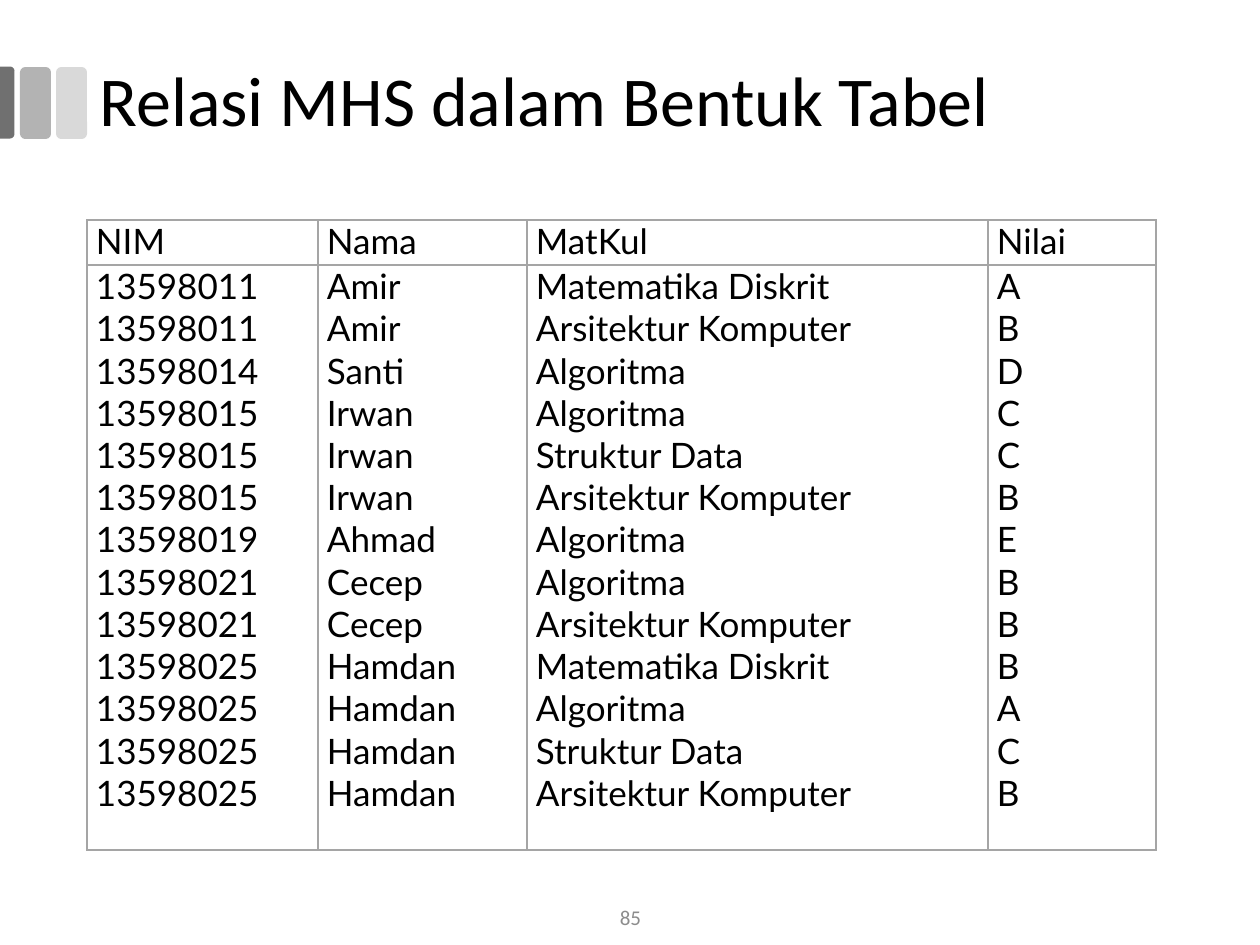
from lxml import etree
from pptx import Presentation
from pptx.dml.color import RGBColor
from pptx.enum.shapes import MSO_SHAPE
from pptx.enum.text import MSO_ANCHOR, PP_ALIGN
from pptx.oxml.ns import qn
from pptx.util import Emu, Pt

ROUND, ROUND_TOP = MSO_SHAPE.ROUNDED_RECTANGLE, MSO_SHAPE.ROUND_2_SAME_RECTANGLE
MIDDLE, TOP = MSO_ANCHOR.MIDDLE, MSO_ANCHOR.TOP
LEFT, CENTER, JUSTIFY = PP_ALIGN.LEFT, PP_ALIGN.CENTER, PP_ALIGN.JUSTIFY
COLORS = {"text": "000000", "number": "8C8C8C", "border": "A5A5A5",
          "dark": "707070", "mid": "B3B3B3", "light": "D9D9D9"}
HEADERS = ["NIM", "Nama", "MatKul", "Nilai"]
RECORDS = [
    ("13598011", "Amir", "Matematika Diskrit", "A"),
    ("13598011", "Amir", "Arsitektur Komputer", "B"),
    ("13598014", "Santi", "Algoritma", "D"),
    ("13598015", "Irwan", "Algoritma", "C"),
    ("13598015", "Irwan", "Struktur Data", "C"),
    ("13598015", "Irwan", "Arsitektur Komputer", "B"),
    ("13598019", "Ahmad", "Algoritma", "E"),
    ("13598021", "Cecep", "Algoritma", "B"),
    ("13598021", "Cecep", "Arsitektur Komputer", "B"),
    ("13598025", "Hamdan", "Matematika Diskrit", "B"),
    ("13598025", "Hamdan", "Algoritma", "A"),
    ("13598025", "Hamdan", "Struktur Data", "C"),
    ("13598025", "Hamdan", "Arsitektur Komputer", "B"),
]


def px(n):
    """Turn px into EMU."""
    return Emu(round(n * 914400 / 126))


def write(tf, lines, size, font, color, align):
    """Write one paragraph for each line."""
    for i, line in enumerate(lines):
        p = tf.add_paragraph() if i else tf.paragraphs[0]
        p.alignment = align
        r = p.add_run()
        r.text = line
        r.font.size, r.font.name, r.font.bold = Pt(size), font, False
        r.font.color.rgb = RGBColor.from_string(COLORS[color])


def add_bar(s, kind, x, y, w, h, color):
    """Add one flat bar."""
    sp = s.shapes.add_shape(kind, px(x), px(y), px(w), px(h))
    sp.shadow.inherit = False
    sp.fill.solid()
    sp.fill.fore_color.rgb = RGBColor.from_string(COLORS[color])
    sp.line.fill.background()
    return sp


def add_bars(s, x, y, h):
    """Add the three bars beside the title."""
    edge, w, step = 15, 31, 36
    for i, color in ((1, "light"), (0, "mid")):
        add_bar(s, ROUND, x + edge + 5 + i * step, y, w, h, color)
    sp = add_bar(s, ROUND_TOP, x + (edge - h) // 2, y + (h - edge) // 2, h, edge, "dark")
    sp.adjustments[0] = 0.29
    sp.rotation = 90


def add_title(s, x, y, w, h):
    """Place and format the title."""
    sp = s.shapes.title
    sp.left, sp.top, sp.width, sp.height = map(px, (x, y, w, h))
    tf = sp.text_frame
    tf.vertical_anchor = MIDDLE
    write(tf, ["Relasi MHS dalam Bentuk Tabel"], 40, "Calibri", "text", LEFT)
    tf.paragraphs[0].line_spacing = 0.9


def set_borders(cell):
    """Draw a thin line on each side of a cell."""
    tc_pr = cell._tc.get_or_add_tcPr()
    for side in ("lnL", "lnR", "lnT", "lnB"):
        ln = etree.SubElement(tc_pr, qn(f"a:{side}"), w=str(Pt(1)))
        fill = etree.SubElement(ln, qn("a:solidFill"))
        etree.SubElement(fill, qn("a:srgbClr"), val=COLORS["border"])


def fill_cell(cell, lines):
    """Format a cell and write its lines."""
    cell.margin_left = cell.margin_right = px(9)
    cell.margin_top = cell.margin_bottom = 0
    cell.vertical_anchor = TOP
    set_borders(cell)
    cell.fill.background()
    write(cell.text_frame, lines, 20, "Lato", "text", JUSTIFY)


def add_relation(s, x, y, w, h):
    """Add the table with a header row and one row of stacked values."""
    table = s.shapes.add_table(2, len(HEADERS), px(x), px(y), px(w), px(h)).table
    table.first_row = table.horz_banding = False
    head = 45
    for row, height in zip(table.rows, (head, h - head)):
        row.height = px(height)
    widths = (231, 209, 461, w - 901)
    for i, (header, values) in enumerate(zip(HEADERS, zip(*RECORDS))):
        table.columns[i].width = px(widths[i])
        fill_cell(table.cell(0, i), [header])
        fill_cell(table.cell(1, i), values)


def add_number(s, x, y, w, h):
    """Add the page number."""
    tf = s.shapes.add_textbox(px(x), px(y), px(w), px(h)).text_frame
    tf.word_wrap = True
    tf.vertical_anchor = MIDDLE
    write(tf, ["85"], 12, "Calibri", "number", CENTER)


def main():
    """Build the slide and save it."""
    prs = Presentation()
    prs.slide_width, prs.slide_height = px(1260), px(945)
    s = prs.slides.add_slide(prs.slide_layouts[5])
    add_bars(s, 0, 67, 72)
    add_title(s, 87, 21, 1173, 165)
    add_relation(s, 87, 220, 1069, 630)
    add_number(s, 489, 892, 283, 50)
    prs.save("out.pptx")


if __name__ == "__main__":
    main()
